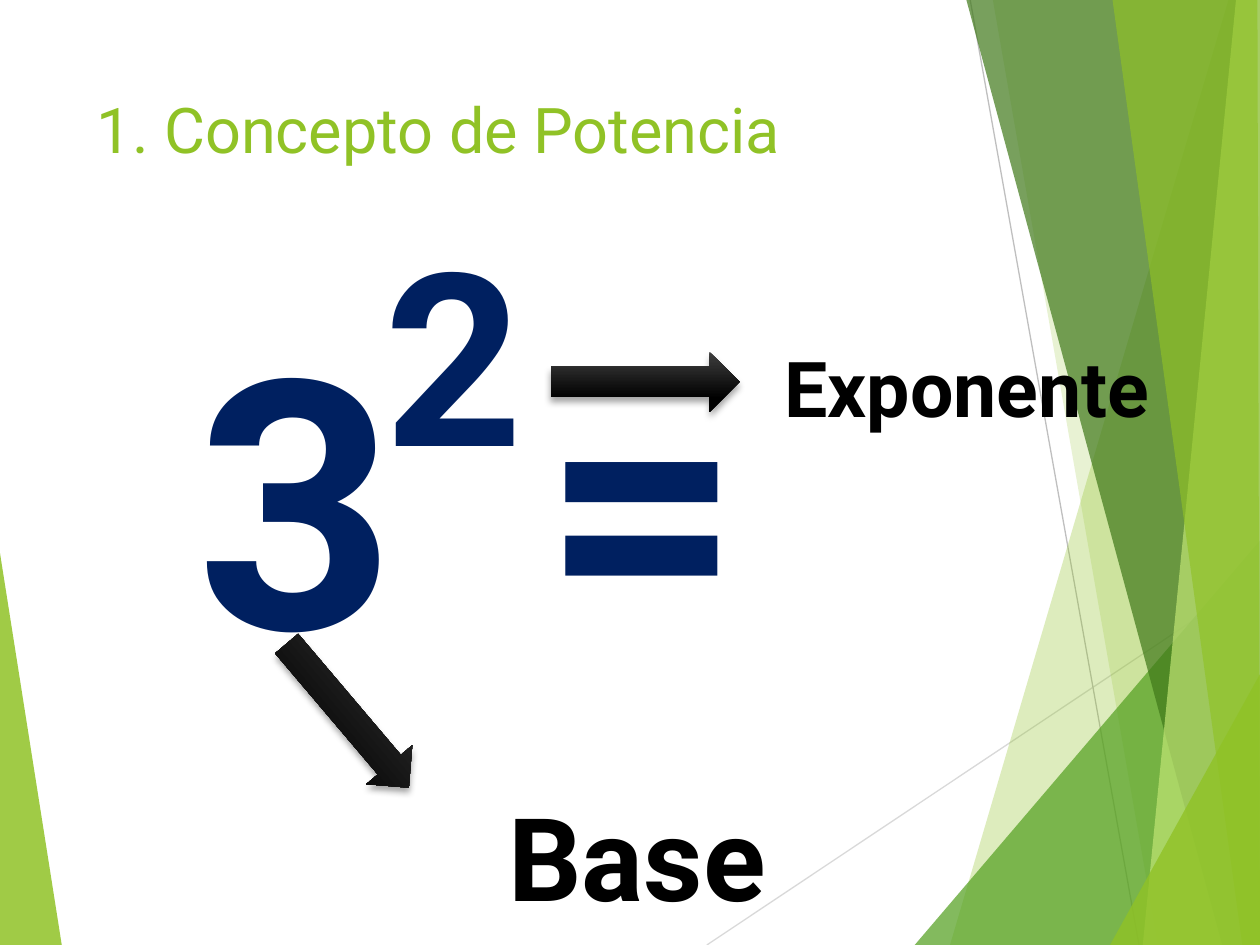
from lxml import etree
from pptx import Presentation, util as u
from pptx.dml.color import RGBColor
from pptx.enum import shapes, text
from pptx.oxml.ns import qn

W, H = 10, 7.5
THEME = {
    "font": "Roboto",
    "lime": "90C226", "green": "54A021", "forest": "3F7819", "pale": "C0E474",
    "navy": "002060", "black": "000000", "gray": "3F3F3F",
    "ray_light": "D9D9D9", "ray_dark": "BFBFBF",
    "title": 36, "digit": 199, "power": 138, "exponent": 44, "base": 66,
}

LEFT_FACET = ("lime", 85, [(0, 4.39), (0.49, H), (0, H)])
RAYS = [("ray_light", (5.61, H), (W, 4.57)), ("ray_dark", (7.7, 0), (9.04, H))]
RIGHT_FACETS = [
    ("lime", 30, [(9.75, 0), (7.54, H), (W, H), (W, 0)]),
    ("lime", 20, [(7.88, 0), (9.19, H), (W, H), (W, 0)]),
    ("green", 72, [(7.26, H), (W, 4.29), (W, H)]),
    ("forest", 70, [(7.67, 0), (9.7, H), (W, H), (W, 0)]),
    ("pale", 70, [(9.81, 0), (9.07, H), (W, H), (W, 0)]),
    ("lime", 65, [(8.83, 0), (9.86, H), (W, H), (9.98, 0)]),
    ("lime", 80, [(8.81, H), (W, 5.35), (W, H)]),
]

LEFT, CENTER = text.PP_ALIGN.LEFT, text.PP_ALIGN.CENTER
TEXTS = [
    ("1. Concepto de Potencia", "title", "lime", False, LEFT, (0.67, 0.67, 6.94, 1.44)),
    ("3", "digit", "navy", True, LEFT, (1.46, 2.18, 1.65, 3.45)),
    ("2", "power", "navy", True, LEFT, (2.95, 1.58, 1.65, 2.42)),
    ("=", "digit", "navy", True, LEFT, (4.21, 2.18, 1.65, 3.45)),
    ("Exponente", "exponent", "black", True, CENTER, (6.02, 2.65, 3.31, 0.84)),
    ("Base", "base", "black", True, CENTER, (3.4, 6.19, 3.31, 1.21)),
]
ARROW_SIZE = (1.5, 0.48)
ARROWS = [((4.37, 2.79), 0), ((2.01, 5.44), 49.7)]


def color(name):
    return RGBColor.from_string(THEME[name])


def inches(values):
    return [u.Inches(v) for v in values]


def add_facet(s, name, opacity, points):
    start, *rest = [inches(p) for p in points]
    builder = s.shapes.build_freeform(*start)
    builder.add_line_segments(rest, close=True)
    sp = builder.convert_to_shape()
    sp.shadow.inherit = False
    sp.line.fill.background()
    sp.fill.solid()
    sp.fill.fore_color.rgb = color(name)
    clr = sp._element.spPr.find(qn("a:solidFill"))[0]
    etree.SubElement(clr, qn("a:alpha"), val=str(opacity * 1000))


def add_ray(s, name, start, end):
    sp = s.shapes.add_connector(shapes.MSO_CONNECTOR.STRAIGHT, *inches(start + end))
    sp.line.color.rgb = color(name)
    sp.line.width = u.Pt(0.75)
    etree.SubElement(sp._element.spPr, qn("a:effectLst"))


def add_text(s, words, size, name, bold, align, box):
    tf = s.shapes.add_textbox(*inches(box)).text_frame
    tf.word_wrap = True
    if size != "title":
        tf.auto_size = text.MSO_AUTO_SIZE.SHAPE_TO_FIT_TEXT
    p = tf.paragraphs[0]
    p.alignment = align
    r = p.add_run()
    r.text = words
    r.font.name = THEME["font"]
    r.font.size = u.Pt(THEME[size])
    r.font.bold = bold
    r.font.color.rgb = color(name)


def add_arrow(s, corner, rotation):
    sp = s.shapes.add_shape(shapes.MSO_SHAPE.RIGHT_ARROW, *inches(corner + ARROW_SIZE))
    sp.rotation = rotation
    sp.line.fill.background()
    sp.fill.gradient()
    sp.fill.gradient_angle = 270
    for stop, (position, name) in zip(sp.fill.gradient_stops, [(0, "gray"), (0.78, "black")]):
        stop.position = position
        stop.color.rgb = color(name)
    sp.shadow.inherit = False
    effects = sp._element.spPr.find(qn("a:effectLst"))
    shadow = etree.SubElement(effects, qn("a:outerShdw"), blurRad=str(u.Pt(4)),
                              dist=str(u.Pt(3)), dir="5400000", rotWithShape="0")
    clr = etree.SubElement(shadow, qn("a:srgbClr"), val=THEME["black"])
    etree.SubElement(clr, qn("a:alpha"), val="35000")


def main():
    prs = Presentation()
    prs.slide_width, prs.slide_height = inches((W, H))
    s = prs.slides.add_slide(prs.slide_layouts[6])
    add_facet(s, *LEFT_FACET)
    for ray in RAYS:
        add_ray(s, *ray)
    for facet in RIGHT_FACETS:
        add_facet(s, *facet)
    for item in TEXTS[:4]:
        add_text(s, *item)
    for arrow in ARROWS:
        add_arrow(s, *arrow)
    for item in TEXTS[4:]:
        add_text(s, *item)
    prs.save("out.pptx")


if __name__ == "__main__":
    main()
